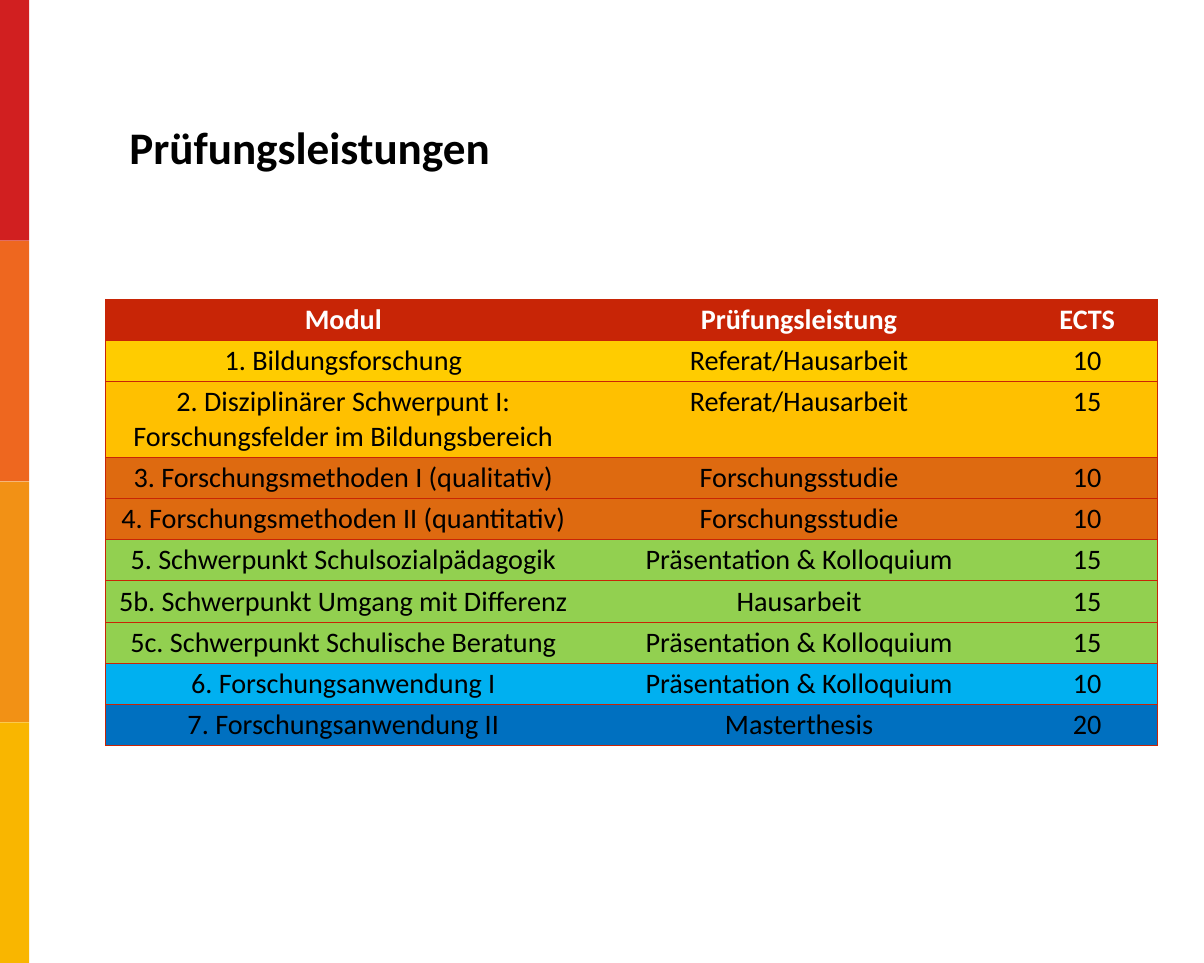
from dataclasses import dataclass

from lxml.etree import SubElement
from pptx import Presentation
from pptx.dml.color import RGBColor as RGB
from pptx.enum.shapes import MSO_SHAPE as SHAPE
from pptx.enum.text import MSO_ANCHOR as ANCHOR, PP_ALIGN as ALIGN
from pptx.oxml.ns import qn
from pptx.util import Pt


@dataclass(frozen=True)
class Theme:
    font: str = "Calibri"
    title_size: int = 48
    table_size: int = 30
    text: str = "000000"
    header_text: str = "FFFFFF"
    rule: str = "C82506"
    bars: tuple = ("D11F20", "EE671F", "F29115", "F9B600")
    yellow: str = "FFCC00"
    amber: str = "FFC000"
    orange: str = "DE6A10"
    green: str = "92D050"
    light_blue: str = "00B0F0"
    blue: str = "0070C0"


class SlideBuilder:
    def __init__(self, slide, theme):
        self.s, self.theme = slide, theme

    def add_run(self, p, text, size, color, bold=False):
        r = p.add_run()
        r.text = text
        r.font.name, r.font.size, r.font.bold = self.theme.font, Pt(size), bold
        r.font.color.rgb = RGB.from_string(color)

    def bar(self, x, y, w, h, color):
        sp = self.s.shapes.add_shape(SHAPE.RECTANGLE, Pt(x), Pt(y), Pt(w), Pt(h))
        sp.shadow.inherit = False
        sp.fill.solid()
        sp.fill.fore_color.rgb = RGB.from_string(color)
        sp.line.fill.background()

    def title(self, x, y, w, h, text):
        tf = self.s.shapes.add_textbox(Pt(x), Pt(y), Pt(w), Pt(h)).text_frame
        tf.word_wrap = True
        tf.vertical_anchor = ANCHOR.MIDDLE
        tf.margin_left = tf.margin_right = tf.margin_top = tf.margin_bottom = Pt(4.5)
        self.add_run(tf.paragraphs[0], text, self.theme.title_size, self.theme.text, True)

    def border(self, cell, side, visible):
        ln = SubElement(cell._tc.get_or_add_tcPr(), qn(f"a:ln{side}"), w=str(Pt(1)))
        if visible:
            fill = SubElement(ln, qn("a:solidFill"))
            SubElement(fill, qn("a:srgbClr"), val=self.theme.rule)
        else:
            SubElement(ln, qn("a:noFill"))

    def table(self, x, y, widths, heights, rows):
        table = self.s.shapes.add_table(len(rows), len(widths), Pt(x), Pt(y),
                                        Pt(sum(widths)), Pt(sum(heights))).table
        table.horz_banding = False
        for column, width in zip(table.columns, widths):
            column.width = Pt(width)
        for i, (height, (fill, *texts)) in enumerate(zip(heights, rows)):
            table.rows[i].height = Pt(height)
            header = i == 0
            color = self.theme.header_text if header else self.theme.text
            for j, text in enumerate(texts):
                cell = table.cell(i, j)
                # Rules run along every row and around the outside only
                edges = {"L": j == 0, "R": j == len(widths) - 1, "T": True, "B": True}
                for side, visible in edges.items():
                    self.border(cell, side, visible)
                cell.fill.solid()
                cell.fill.fore_color.rgb = RGB.from_string(fill)
                p = cell.text_frame.paragraphs[0]
                p.alignment = ALIGN.CENTER
                self.add_run(p, text, self.theme.table_size, color, header)


def main():
    theme = Theme()
    prs = Presentation()
    prs.slide_width, prs.slide_height = Pt(1280), Pt(1024)
    builder = SlideBuilder(prs.slides.add_slide(prs.slide_layouts[6]), theme)

    # Colour bars along the left edge
    bar_height = 1024 / len(theme.bars)
    for i, color in enumerate(theme.bars):
        builder.bar(0, i * bar_height, 31, bar_height, color)

    # Title
    builder.title(133, 63, 1111, 185, "Prüfungsleistungen")

    # Examinations by module
    colloquium = "Präsentation & Kolloquium"
    modules = [
        (theme.rule, "Modul", "Prüfungsleistung", "ECTS"),
        (theme.yellow, "1. Bildungsforschung", "Referat/Hausarbeit", "10"),
        (theme.amber, "2. Disziplinärer Schwerpunt I: Forschungsfelder im Bildungsbereich",
         "Referat/Hausarbeit", "15"),
        (theme.orange, "3. Forschungsmethoden I (qualitativ)", "Forschungsstudie", "10"),
        (theme.orange, "4. Forschungsmethoden II (quantitativ)", "Forschungsstudie", "10"),
        (theme.green, "5. Schwerpunkt Schulsozialpädagogik", colloquium, "15"),
        (theme.green, "5b. Schwerpunkt Umgang mit Differenz", "Hausarbeit", "15"),
        (theme.green, "5c. Schwerpunkt Schulische Beratung", colloquium, "15"),
        (theme.light_blue, "6. Forschungsanwendung I", colloquium, "10"),
        (theme.blue, "7. Forschungsanwendung II", "Masterthesis", "20"),
    ]
    heights = [43.8] * len(modules)
    heights[2] = 80.4  # two lines of text
    builder.table(112.3, 318.2, (505.4, 463.7, 149), heights, modules)

    prs.save("out.pptx")


if __name__ == "__main__":
    main()
